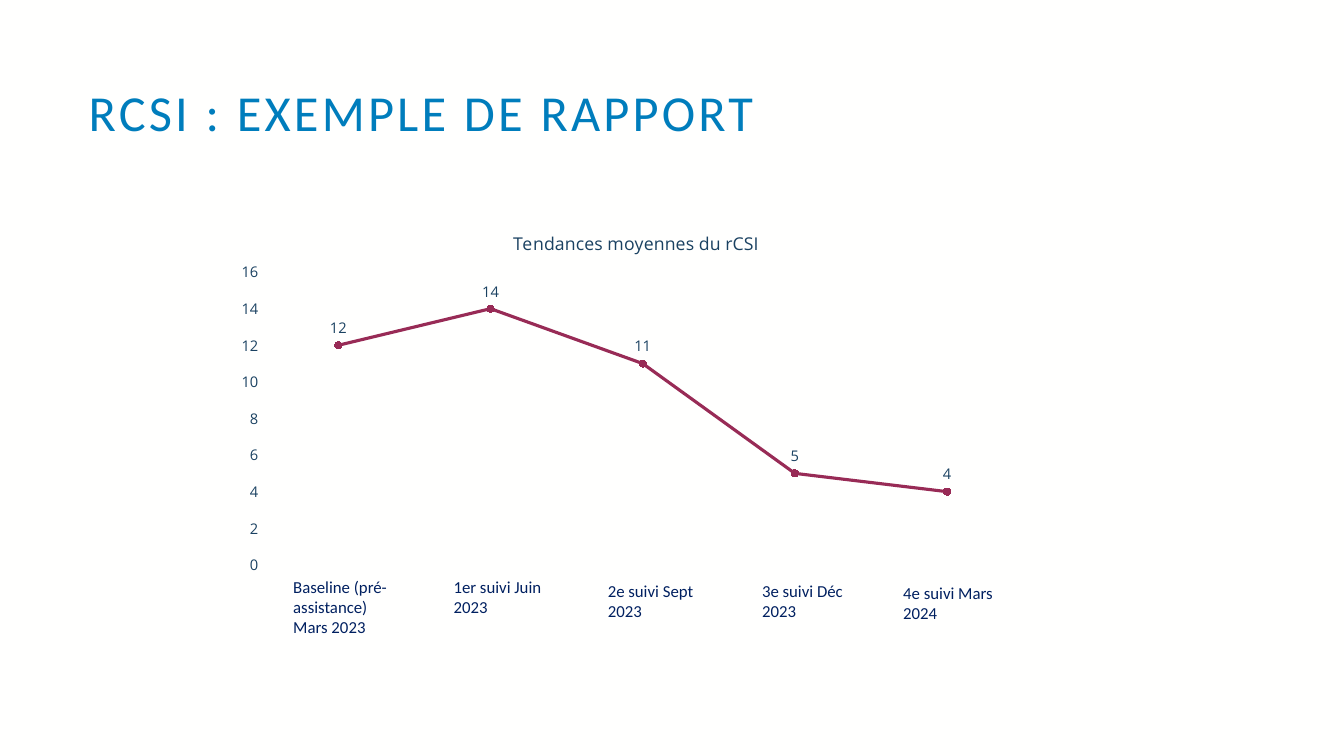
from lxml import etree
from pptx import Presentation
from pptx.chart.data import CategoryChartData
from pptx.dml.color import RGBColor
from pptx.enum.chart import XL_CHART_TYPE, XL_LABEL_POSITION, XL_MARKER_STYLE, XL_TICK_MARK
from pptx.enum.text import MSO_ANCHOR, MSO_AUTO_SIZE, PP_ALIGN
from pptx.oxml import parse_xml
from pptx.oxml.ns import nsdecls, qn
from pptx.util import Inches, Pt

COLORS = {
    "background": "FFFFFE",
    "title": "007DBC",
    "chart_text": "1A4161",
    "line": "982B56",
    "caption": "002060",
}
SCORES = [12, 14, 11, 5, 4]
# Caption text, left and top in inches
CAPTIONS = [
    ("Baseline (pré-assistance) Mars 2023", 2.81, 5.67),
    ("1er suivi Juin 2023", 4.4, 5.67),
    ("2e suivi Sept 2023", 5.93, 5.71),
    ("3e suivi Déc 2023", 7.46, 5.71),
    ("4e suivi Mars 2024", 8.86, 5.73),
]


def color(name):
    return RGBColor.from_string(COLORS[name])


def format_font(font, name, size, color_name):
    font.name = name
    font.size = Pt(size)
    font.bold = False
    font.color.rgb = color(color_name)


def set_title(slide, text):
    title = slide.shapes.title
    title.left, title.top = Inches(0.78), Inches(0.78)
    title.width, title.height = Inches(12.09), Inches(0.72)
    text_frame = title.text_frame
    text_frame.text = text
    text_frame.vertical_anchor = MSO_ANCHOR.MIDDLE
    text_frame.auto_size = MSO_AUTO_SIZE.NONE
    paragraph = text_frame.paragraphs[0]
    paragraph.alignment = PP_ALIGN.LEFT
    paragraph.line_spacing = 0.9
    run = paragraph.runs[0]
    format_font(run.font, "Calibri", 36, "title")
    run.font._element.set("spc", "230")


def set_layout(element, following, **fractions):
    """Place a chart part by fractions of the chart area, ahead of the following tags."""
    for layout in element.findall(qn("c:layout")):
        element.remove(layout)
    layout = parse_xml(f"<c:layout {nsdecls('c')}/>")
    manual = etree.SubElement(layout, qn("c:manualLayout"))
    if "w" in fractions:
        etree.SubElement(manual, qn("c:layoutTarget")).set("val", "inner")
    for axis in ("x", "y"):
        etree.SubElement(manual, qn(f"c:{axis}Mode")).set("val", "edge")
    for key, value in fractions.items():
        etree.SubElement(manual, qn(f"c:{key}")).set("val", str(value))
    next(child for child in element if child.tag in map(qn, following)).addprevious(layout)


def style_series(series):
    series.smooth = False
    series.format.line.color.rgb = color("line")
    series.format.line.width = Pt(2.25)
    marker = series.marker
    marker.style = XL_MARKER_STYLE.CIRCLE
    marker.size = 5
    marker.format.fill.solid()
    marker.format.fill.fore_color.rgb = color("line")
    marker.format.line.color.rgb = color("line")
    labels = series.data_labels
    labels.show_value = True
    labels.position = XL_LABEL_POSITION.ABOVE
    format_font(labels.font, "Open Sans", 10.5, "chart_text")


def add_trend_chart(slide, title, scores):
    data = CategoryChartData()
    data.categories = [str(number) for number in range(1, len(scores) + 1)]
    data.add_series("Series 1", scores)
    chart = slide.shapes.add_chart(
        XL_CHART_TYPE.LINE_MARKERS,
        Inches(2.23), Inches(2.06), Inches(8.08), Inches(3.72), data,
    ).chart
    chart.has_legend = False
    chart.plots[0].vary_by_categories = False
    format_font(chart.font, "Open Sans", 10.5, "chart_text")

    # Chart title
    text_frame = chart.chart_title.text_frame
    text_frame.text = title
    format_font(text_frame.paragraphs[0].runs[0].font, "Open Sans", 12.6, "chart_text")
    chart.chart_title.include_in_layout = False
    set_layout(chart.chart_title._element, ["c:overlay"], x=0.35, y=0.05)

    # Axes
    chart.category_axis.visible = False
    value_axis = chart.value_axis
    value_axis.has_major_gridlines = False
    value_axis.minimum_scale, value_axis.maximum_scale = 0, 16
    value_axis.major_unit = 2
    value_axis.major_tick_mark = XL_TICK_MARK.NONE
    value_axis.minor_tick_mark = XL_TICK_MARK.NONE
    value_axis.format.line.fill.background()
    format_font(value_axis.tick_labels.font, "Open Sans", 10.5, "chart_text")

    # Plot area
    style_series(chart.plots[0].series[0])
    plot_area = chart._chartSpace.chart.plotArea
    set_layout(plot_area, ["c:lineChart"], x=0.046, y=0.172, w=0.934, h=0.781)


def add_caption(slide, text, left, top):
    height = 0.71 if len(text) > 20 else 0.5
    box = slide.shapes.add_textbox(Inches(left), Inches(top), Inches(1.2), Inches(height))
    text_frame = box.text_frame
    text_frame.word_wrap = True
    text_frame.auto_size = MSO_AUTO_SIZE.SHAPE_TO_FIT_TEXT
    text_frame.text = text
    format_font(text_frame.paragraphs[0].runs[0].font, "Calibri", 12, "caption")


def main():
    presentation = Presentation()
    presentation.slide_width, presentation.slide_height = Inches(13.33), Inches(7.5)
    slide = presentation.slides.add_slide(presentation.slide_layouts[5])
    slide.background.fill.solid()
    slide.background.fill.fore_color.rgb = color("background")

    set_title(slide, "RCSI : EXEMPLE DE RAPPORT")
    add_trend_chart(slide, "Tendances moyennes du rCSI", SCORES)
    for text, left, top in CAPTIONS:
        add_caption(slide, text, left, top)

    presentation.save("out.pptx")


if __name__ == "__main__":
    main()
